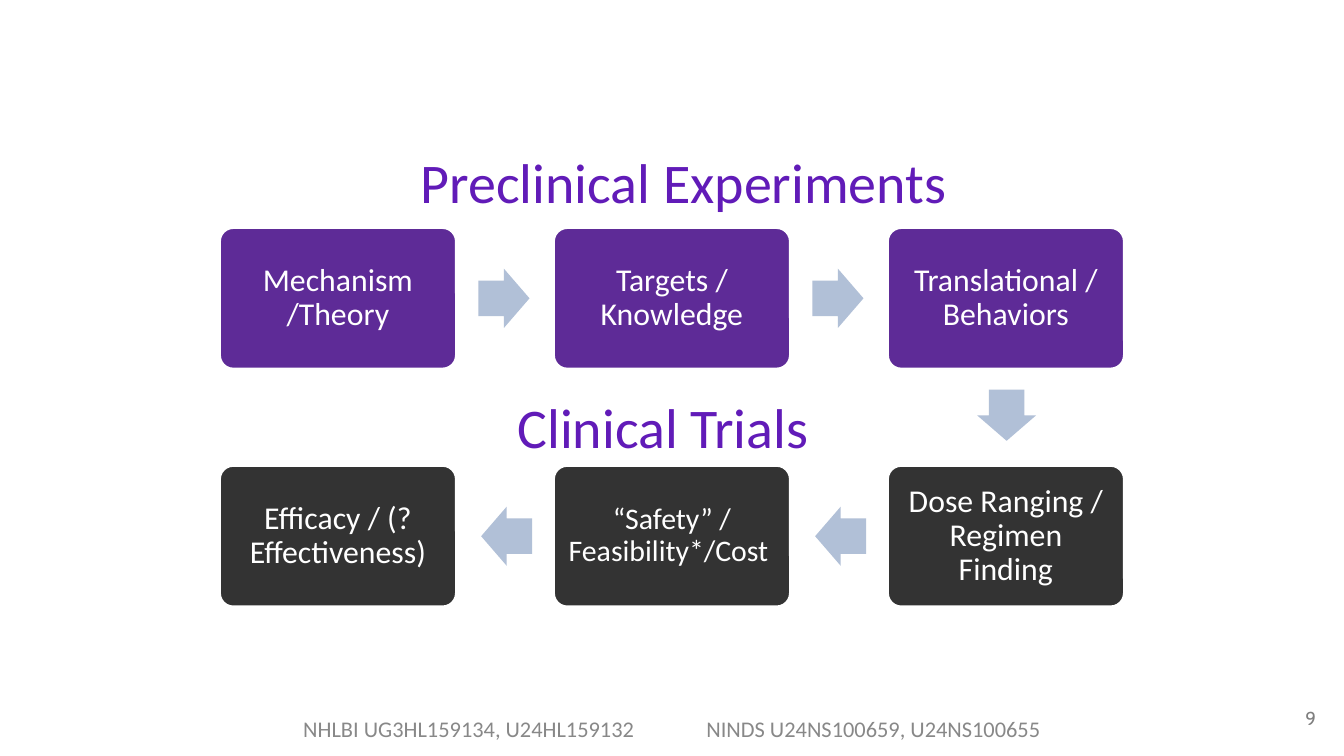
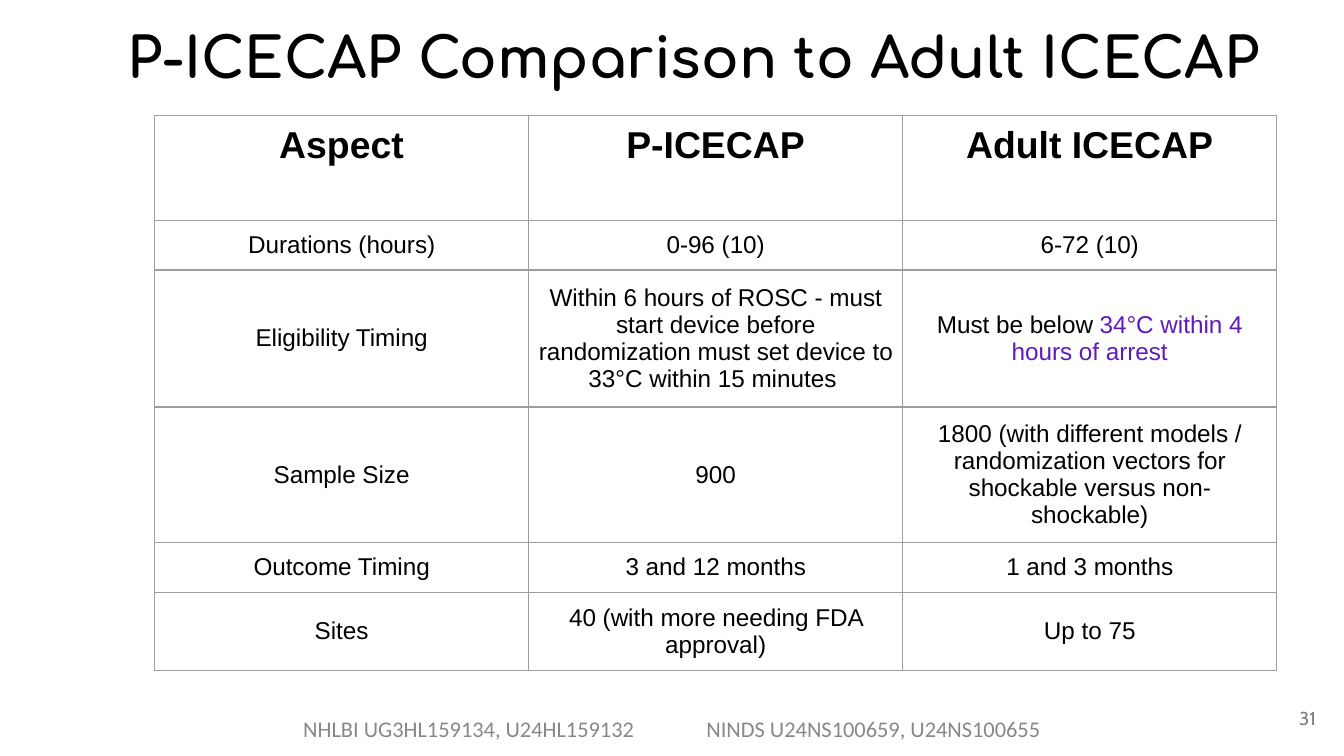
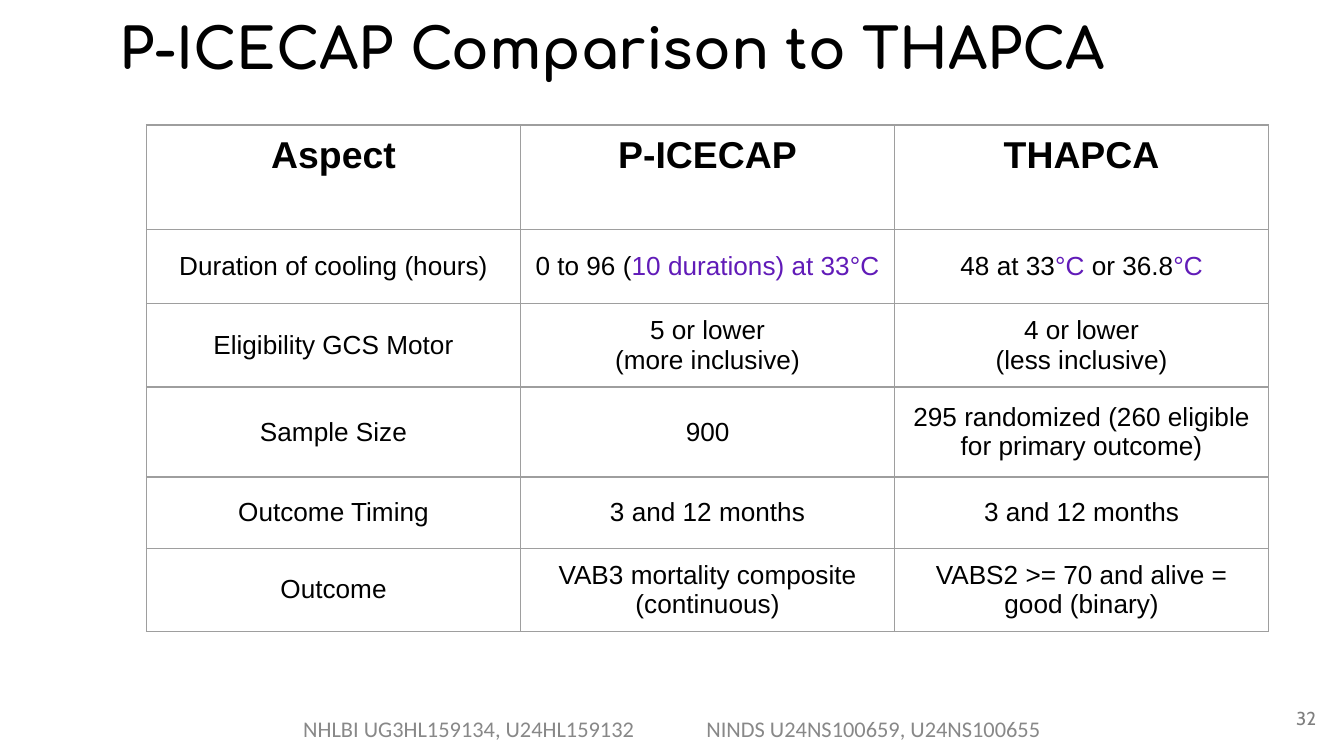
from lxml.etree import SubElement
from pptx import Presentation
from pptx.dml.color import RGBColor
from pptx.enum.shapes import MSO_SHAPE
from pptx.enum.text import MSO_ANCHOR, MSO_AUTO_SIZE, PP_ALIGN
from pptx.oxml.ns import qn
from pptx.util import Inches, Pt

COLORS = {
    "white": "FFFFFF",
    "black": "000000",
    "preclinical": "5E2B97",
    "clinical": "333333",
    "arrow": "B1C0D7",
    "accent": "611BB8",
    "footer": "888888",
    "number": "7F7F7F",
    "border": "9E9E9E",
}
TITLE_ONLY, BLANK = 5, 6
FOOTER = "NHLBI UG3HL159134, U24HL159132\tNINDS U24NS100659, U24NS100655"

PRECLINICAL_STEPS = [
    ("Mechanism /Theory", 17),
    ("Targets / Knowledge", 17),
    ("Translational / Behaviors", 17),
]
CLINICAL_STEPS = [
    ("Efficacy / (?Effectiveness)", 17),
    ("“Safety” / Feasibility*/Cost ", 16),
    ("Dose Ranging / Regimen Finding", 17),
]

# Asterisks enclose the accented part of a cell.
ADULT_ROWS = [
    (0.78, ["Aspect", "P-ICECAP", "Adult ICECAP"]),
    (0.37, ["Durations (hours)", "0-96 (10)", "6-72 (10)"]),
    (1.02, ["Eligibility Timing",
            "Within 6 hours of ROSC - must start device before randomization "
            "must set device to 33°C within 15 minutes ",
            "Must be below *34°C within 4 hours of arrest*"]),
    (0.8, ["Sample Size", "900",
           "1800 (with different models / randomization vectors for "
           "shockable versus non-shockable)"]),
    (0.37, ["Outcome Timing", "3 and 12 months", "1 and 3 months"]),
    (0.58, ["Sites", "40 (with more needing FDA approval)", "Up to 75"]),
]
THAPCA_ROWS = [
    (0.78, ["Aspect", "P-ICECAP", "THAPCA"]),
    (0.55, ["Duration of cooling (hours)", "0 to 96 (*10 durations) at 33°C*",
            "48 at 33*°C* or 36.8*°C*"]),
    (0.62, ["Eligibility GCS Motor", "5 or lower\n(more inclusive)",
            "4 or lower\n(less inclusive)"]),
    (0.67, ["Sample Size", "900",
            "295 randomized (260 eligible for primary outcome)"]),
    (0.53, ["Outcome Timing", "3 and 12 months", "3 and 12 months"]),
    (0.62, ["Outcome", "VAB3 mortality composite (continuous)",
            "VABS2 >= 70 and alive = good (binary)"]),
]


def rgb(name):
    return RGBColor.from_string(COLORS[name])


def set_font(para, name, size, color, bold=False):
    para.font.name = name
    para.font.size = Pt(size)
    para.font.bold = bold
    para.font.color.rgb = rgb(color)


def set_margins(target, across, down):
    """Set the insets of a text frame or a table cell."""
    target.margin_left = target.margin_right = Inches(across)
    target.margin_top = target.margin_bottom = Inches(down)


def add_text(page, box, text, margins, anchor=MSO_ANCHOR.TOP):
    """Add a text box and return its paragraph."""
    frame = page.shapes.add_textbox(*map(Inches, box)).text_frame
    frame.word_wrap = True
    frame.vertical_anchor = anchor
    set_margins(frame, *margins)
    para = frame.paragraphs[0]
    para.text = text
    return para


def add_page(deck, layout, number):
    """Add a slide with the shared footer and its slide number."""
    page = deck.slides.add_slide(deck.slide_layouts[layout])

    footer = add_text(page, (1.98, 5.22, 6.04, 0.4), FOOTER, (0.1, 0.1), MSO_ANCHOR.MIDDLE)
    footer.alignment = PP_ALIGN.CENTER
    tabs = SubElement(footer._p.get_or_add_pPr(), qn("a:tabLst"))
    SubElement(tabs, qn("a:tab"), pos=str(Inches(3)), algn="l")
    set_font(footer, "Calibri", 12, "footer")

    label = add_text(page, (9.29, 5.13, 0.6, 0.43), str(number), (0.1, 0.1), MSO_ANCHOR.MIDDLE)
    label.alignment = PP_ALIGN.RIGHT
    set_font(label, "Cabin", 10, "number")
    return page


def add_block(page, kind, box, fill):
    shape = page.shapes.add_shape(kind, *map(Inches, box))
    shape.shadow.inherit = False
    shape.fill.solid()
    shape.fill.fore_color.rgb = rgb(fill)
    return shape


def add_step(page, left, top, text, size, fill):
    shape = add_block(page, MSO_SHAPE.ROUNDED_RECTANGLE, (left, top, 1.77, 1.06), fill)
    shape.adjustments[0] = 0.1
    shape.line.color.rgb = rgb("white")
    shape.line.width = Pt(2)
    frame = shape.text_frame
    frame.word_wrap = True
    frame.vertical_anchor = MSO_ANCHOR.MIDDLE
    set_margins(frame, 0.07, 0.07)
    para = frame.paragraphs[0]
    para.text = text
    para.alignment = PP_ALIGN.CENTER
    para.line_spacing = 0.9
    set_font(para, "Calibri", size, "white")


def add_step_arrow(page, left, top, rotation):
    arrow = add_block(page, MSO_SHAPE.RIGHT_ARROW, (left, top, 0.38, 0.44), "arrow")
    arrow.adjustments[0] = 0.6
    arrow.rotation = rotation
    arrow.line.fill.background()


def add_step_row(page, left, top, pitch, steps, fill, gap, rotation):
    """Add a row of steps with an arrow, offset by gap, between neighbours."""
    for column, (text, size) in enumerate(steps):
        step_left = left + column * pitch
        add_step(page, step_left, top, text, size, fill)
        if column < len(steps) - 1:
            add_step_arrow(page, step_left + gap, top + 0.31, rotation)


def add_flow(page, left, top):
    column_pitch, row_pitch = 4.97 / 2, 1.77
    add_step_row(page, left, top, column_pitch, PRECLINICAL_STEPS, "preclinical", 1.93, 0)
    add_step_arrow(page, left + 2 * column_pitch + 0.7, top + 1.18, 90)
    add_step_row(page, left, top + row_pitch, column_pitch, CLINICAL_STEPS,
                 "clinical", 1.95, 180)
    headings = [
        ("Preclinical Experiments", 1.43, -0.63, 4.25),
        ("Clinical Trials", 2.15, 1.19, 2.44),
    ]
    for text, across, down, width in headings:
        box = (left + across, top + down, width, 0.58)
        set_font(add_text(page, box, text, (0.07, 0.04)), "Calibri", 30, "accent")


def set_title(page, box, text):
    title = page.shapes.title
    title.left, title.top, title.width, title.height = map(Inches, box)
    frame = title.text_frame
    frame.auto_size = MSO_AUTO_SIZE.NONE
    frame.vertical_anchor = MSO_ANCHOR.TOP
    set_margins(frame, 0.1, 0.1)
    para = frame.paragraphs[0]
    para.text = text
    para.alignment = PP_ALIGN.LEFT
    set_font(para, "Comfortaa", 30, "black", True)


def add_borders(cell):
    properties = cell._tc.get_or_add_tcPr()
    for position, side in enumerate(("lnL", "lnR", "lnT", "lnB")):
        line = SubElement(properties, qn(f"a:{side}"), w=str(Pt(0.75)))
        properties.insert(position, line)
        fill = SubElement(line, qn("a:solidFill"))
        SubElement(fill, qn("a:srgbClr"), val=COLORS["border"])


def fill_cell(cell, text, size, bold):
    cell.fill.background()
    add_borders(cell)
    set_margins(cell, 0.07, 0.07)
    cell.vertical_anchor = MSO_ANCHOR.TOP if bold else MSO_ANCHOR.MIDDLE
    para = cell.text_frame.paragraphs[0]
    para.alignment = PP_ALIGN.CENTER
    set_font(para, "Arial", size, "black", bold)
    for row, line in enumerate(text.split("\n")):
        if row:
            para.add_line_break()
        for index, part in enumerate(line.split("*")):
            if part:
                span = para.add_run()
                span.text = part
                if index % 2:
                    span.font.color.rgb = rgb("accent")
    # The paragraph mark would otherwise make the last line taller.
    SubElement(para._p, qn("a:endParaRPr"), sz=str(size * 100))


def add_comparison(page, left, top, rows, body_size):
    width, columns = 8.35, len(rows[0][1])
    height = sum(row_height for row_height, _ in rows)
    box = map(Inches, (left, top, width, height))
    table = page.shapes.add_table(len(rows), columns, *box).table
    table.first_row = table.horz_banding = False
    for column in table.columns:
        column.width = Inches(width / columns)
    for row, (row_height, texts) in enumerate(rows):
        table.rows[row].height = Inches(row_height)
        header = row == 0
        for column, text in enumerate(texts):
            fill_cell(table.cell(row, column), text, 20 if header else body_size, header)


def main():
    deck = Presentation()
    deck.slide_width = Inches(10)
    deck.slide_height = deck.slide_width * 9 // 16

    add_flow(add_page(deck, BLANK, 9), 1.63, 1.69)

    adult = add_page(deck, TITLE_ONLY, 31)
    set_title(adult, (0.85, 0.07, 9, 0.79), "P-ICECAP Comparison to Adult ICECAP")
    add_comparison(adult, 1.15, 0.86, ADULT_ROWS, 13)

    thapca = add_page(deck, TITLE_ONLY, 32)
    set_title(thapca, (0.79, 0, 9, 0.94), "P-ICECAP Comparison to THAPCA")
    add_comparison(thapca, 1.09, 0.93, THAPCA_ROWS, 14)

    deck.save("out.pptx")


if __name__ == "__main__":
    main()
